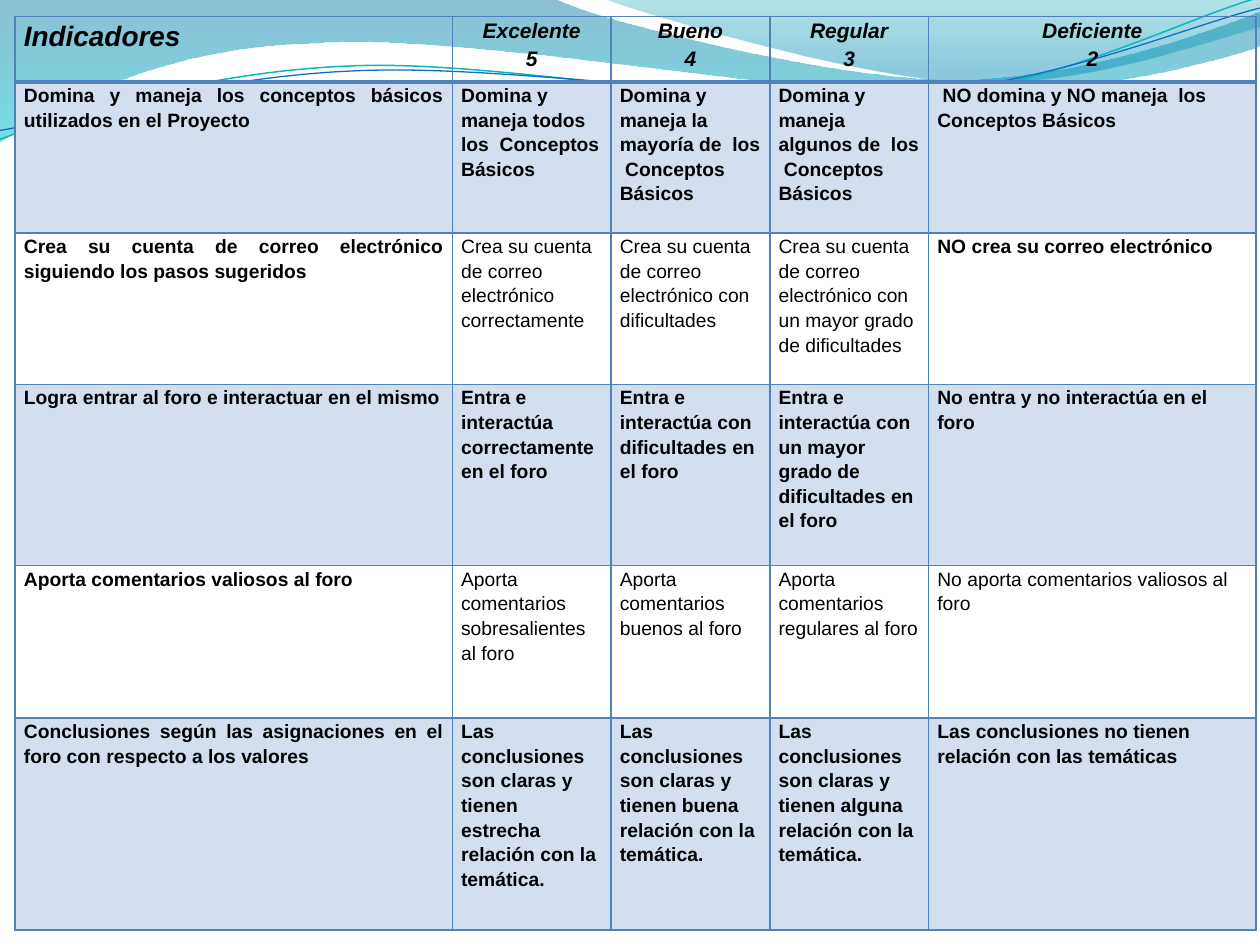
from lxml import etree
from pptx import Presentation, util as u
from pptx.dml.color import RGBColor
from pptx.enum import text
from pptx.oxml import ns

COLORS = {
    "ink": "000000", "border": "4F81BD", "band": "D3DFEE",
    "deep": "0074A1", "aqua": "00C6CF", "teal": "00A1A9", "blue": "008BBF",
    "upper line": "0AB8BF", "lower line": "0F6FC6",
}

RIBBONS = [
    ((0, 0),
     [[(4.4, -0.01)],
      [(4.76, 0.17), (6.64, 0.63), (7.58, 0.63)],
      [(8.53, 0.63), (9.58, 0.26), (10, 0.09)],
      [(10.01, 0.36)],
      [(9.83, 0.44), (8.7, 0.76), (7.46, 0.75)],
      [(6.22, 0.75), (3.82, 0.28), (2.57, 0.34)],
      [(1.29, 0.36), (0.46, 0.83), (-0.01, 1.13)]],
     [("deep", 0, 45), ("aqua", 1, 55)]),
    ((4.79, -0.01),
     [[(5.09, 0.11), (6.82, 0.62), (7.69, 0.65)],
      [(8.56, 0.69), (9.61, 0.32), (10, 0.21)],
      [(10, 0)]],
     [("teal", 0, 30), ("blue", 0.8, 45)]),
]

WAVES = [
    ((-0.02, 0.87),
     [[(0.47, 0.72), (1.58, 0.41), (2.78, 0.42)],
      [(3.96, 0.42), (5.91, 0.93), (7.12, 0.9)],
      [(8.32, 0.87), (9.4, 0.36), (10, 0.22)]],
     "upper line", 0.85),
    ((-0.02, 0.8),
     [[(0.46, 0.75), (1.64, 0.45), (2.83, 0.46)],
      [(4.03, 0.46), (5.96, 0.88), (7.16, 0.85)],
      [(8.35, 0.83), (9.42, 0.42), (10.02, 0.3)]],
     "lower line", 0.75),
]

COLUMN_WIDTHS = [3.47, 1.26, 1.26, 1.26, 2.6]
ROW_HEIGHTS = [0.52, 1.2, 1.2, 1.44, 1.21, 1.68]
PLAIN_CELLS = {(2, 1), (2, 2), (2, 3), (4, 1), (4, 2), (4, 3), (4, 4)}
RUBRIC = [
    ["Indicadores", "Excelente\n5", "Bueno\n4", "Regular\n3", "Deficiente\n2"],
    ["Domina y maneja los conceptos básicos utilizados en el Proyecto",
     "Domina y maneja todos los  Conceptos Básicos",
     "Domina y maneja la mayoría de  los  Conceptos Básicos",
     "Domina y maneja algunos de  los  Conceptos Básicos",
     " NO domina y NO maneja  los  Conceptos Básicos"],
    ["Crea su cuenta de correo electrónico siguiendo los pasos sugeridos",
     "Crea su cuenta de correo electrónico correctamente",
     "Crea su cuenta de correo electrónico con dificultades",
     "Crea su cuenta de correo electrónico con un mayor grado de dificultades",
     "NO crea su correo electrónico"],
    ["Logra entrar al foro e interactuar en el mismo",
     "Entra e interactúa correctamente en el foro",
     "Entra e interactúa con dificultades en el foro",
     "Entra e interactúa con un mayor grado de  dificultades en el foro",
     "No entra y no interactúa en el foro"],
    ["Aporta comentarios valiosos al foro",
     "Aporta comentarios sobresalientes al foro",
     "Aporta comentarios buenos al foro",
     "Aporta comentarios regulares al foro",
     "No aporta comentarios valiosos al foro"],
    ["Conclusiones según las asignaciones en el foro con respecto a los valores",
     "Las conclusiones son claras y tienen estrecha  relación con la temática.",
     "Las conclusiones son claras y tienen buena relación con la temática.",
     "Las conclusiones son claras y tienen alguna relación con la temática.",
     "Las conclusiones no tienen relación con las temáticas"],
]


def rgb(name):
    """Return the named colour."""
    return RGBColor.from_string(COLORS[name])


def add_curve(page, start, segments, close):
    """Draw an outline whose three-point segments are Bézier curves."""
    builder = page.shapes.build_freeform(*map(u.Inches, start), scale=1.0)
    points = [(u.Inches(x), u.Inches(y)) for part in segments for x, y in part]
    builder.add_line_segments(points, close=close)
    shape = builder.convert_to_shape()
    shape.shadow.inherit = False
    steps = iter(list(shape.element.iter(ns.qn("a:lnTo"))))
    for part in segments:
        nodes = [next(steps) for _ in part]
        if len(nodes) == 3:
            nodes[0].tag = ns.qn("a:cubicBezTo")
            for node in nodes[1:]:
                nodes[0].append(node[0])
                node.getparent().remove(node)
    return shape


def add_ribbon(page, start, segments, stops):
    """Draw a translucent ribbon with a vertical gradient."""
    shape = add_curve(page, start, segments, True)
    shape.line.fill.background()
    shape.fill.gradient()
    shape.fill.gradient_angle = 270
    for stop, (color, position, opacity) in zip(shape.fill.gradient_stops, stops):
        stop.color.rgb = rgb(color)
        stop.position = position
    tints = shape.element.spPr.find(ns.qn("a:gradFill")).iter(ns.qn("a:srgbClr"))
    for tint, (_, _, opacity) in zip(tints, stops):
        etree.SubElement(tint, ns.qn("a:alpha"), val=str(opacity * 1000))


def add_wave(page, start, segments, color, width):
    """Draw a thin, slightly tilted wavy line."""
    shape = add_curve(page, start, segments, False)
    shape.fill.background()
    shape.line.color.rgb = rgb(color)
    shape.line.width = u.Pt(width)
    shape.rotation = 357.3


def set_borders(cell, widths):
    """Give the cell its left, right, top and bottom borders."""
    properties = cell._tc.get_or_add_tcPr()
    for index, (side, width) in enumerate(zip("LRTB", widths)):
        line = etree.Element(ns.qn(f"a:ln{side}"), w=str(u.Pt(width)))
        fill = etree.SubElement(line, ns.qn("a:solidFill"))
        etree.SubElement(fill, ns.qn("a:srgbClr"), val=COLORS["border"])
        properties.insert(index, line)


def fill_cell(cell, row, column, words):
    """Write and format one cell of the rubric."""
    header, corner = row == 0, row == column == 0
    cell.margin_left = cell.margin_right = u.Inches(0.07)
    cell.margin_top = cell.margin_bottom = 0
    if row % 2:
        cell.fill.solid()
        cell.fill.fore_color.rgb = rgb("band")
    else:
        cell.fill.background()
    set_borders(cell, (1, 1, 2.25 if row == 1 else 1, 2.25 if header else 1))
    cell.text = words
    for para in cell.text_frame.paragraphs:
        para.line_spacing = 1.15
        if header and column:
            para.alignment = text.PP_ALIGN.CENTER
        elif column == 0 and row:
            para.alignment = text.PP_ALIGN.JUSTIFY
        else:
            para.alignment = text.PP_ALIGN.LEFT
        font = para.font
        font.name = "Arial"
        font.size = u.Pt(16 if corner else 12 if header else 11)
        font.bold = (row, column) not in PLAIN_CELLS
        font.italic = header
        font.color.rgb = rgb("ink")


def add_rubric(page, left, top):
    """Place the grading table with its corner at the given point."""
    frame = page.shapes.add_table(
        len(RUBRIC), len(COLUMN_WIDTHS), u.Inches(left), u.Inches(top),
        u.Inches(sum(COLUMN_WIDTHS)), u.Inches(sum(ROW_HEIGHTS)))
    table = frame.table
    table.first_row = table.horz_banding = False
    for column, width in zip(table.columns, COLUMN_WIDTHS):
        column.width = u.Inches(width)
    for index, height in enumerate(ROW_HEIGHTS):
        table.rows[index].height = u.Inches(height)
        for column, words in enumerate(RUBRIC[index]):
            fill_cell(table.cell(index, column), index, column, words)


def main():
    """Build the deck and save it."""
    deck = Presentation()
    deck.slide_width, deck.slide_height = u.Inches(10), u.Inches(7.5)
    page = deck.slides.add_slide(deck.slide_layouts[6])
    for ribbon in RIBBONS:
        add_ribbon(page, *ribbon)
    for wave in WAVES:
        add_wave(page, *wave)
    add_rubric(page, 0.12, 0.13)
    deck.save("out.pptx")


if __name__ == "__main__":
    main()
